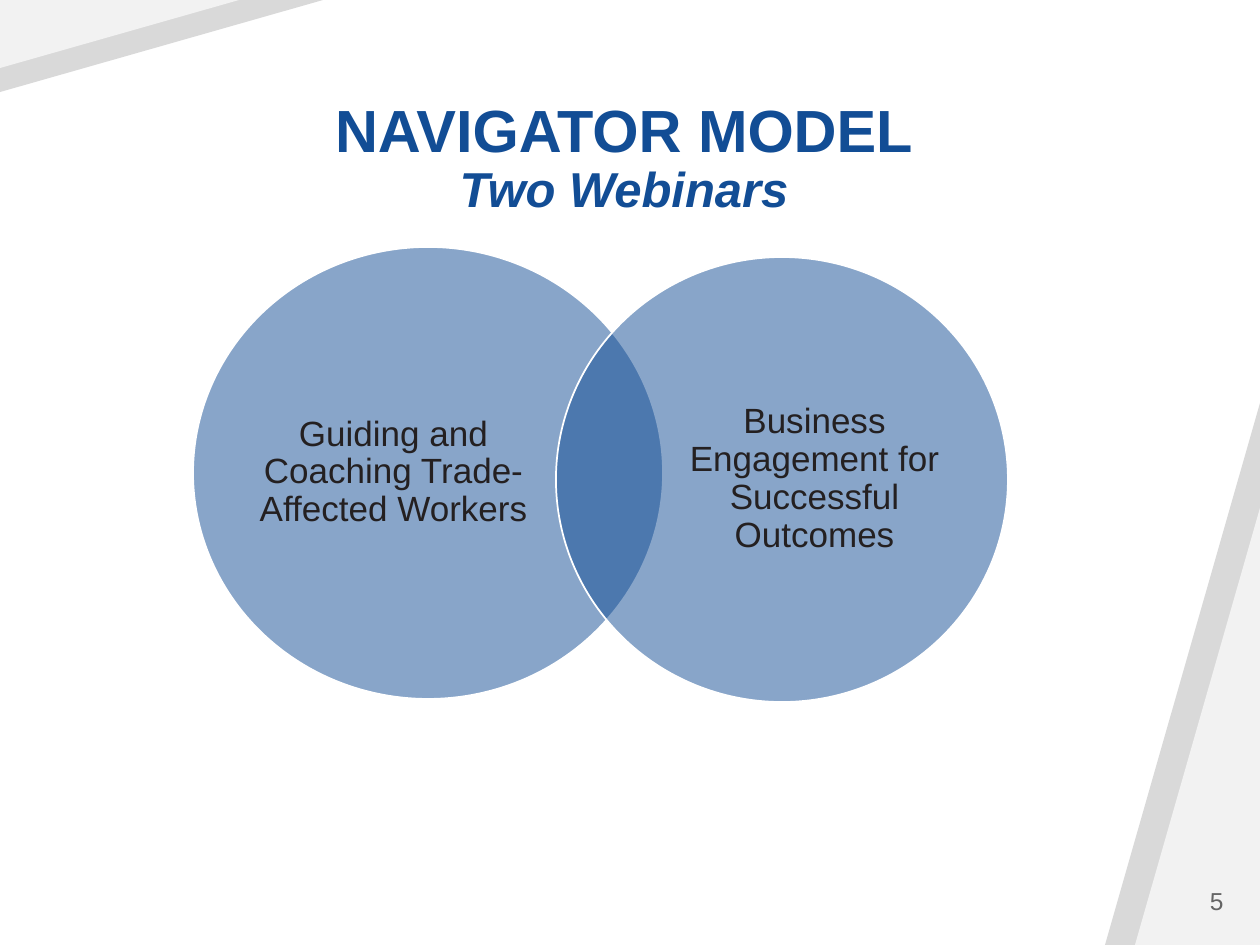
from lxml.etree import SubElement
from pptx import Presentation
from pptx.dml.color import RGBColor
from pptx.enum.shapes import MSO_SHAPE
from pptx.enum.text import MSO_ANCHOR, PP_ALIGN
from pptx.oxml.ns import qn
from pptx.util import Emu, Pt

SLIDE_W, SLIDE_H = 1260, 945
COLORS = {
    "band": "D9D9D9",
    "corner": "F2F2F2",
    "navy": "124D95",
    "outline": "FFFFFF",
    "label": "242021",
    "number": "646464",
}

TITLE_BOX = (169, 95, 910, 169)
TITLE = [("NAVIGATOR MODEL", 34, False), ("Two Webinars", 28, True)]
NUMBER_BOX = (1060, 876, 176, 50)
NUMBER = "5"

WEBINARS = [
    ("Guiding and Coaching Trade-Affected Workers",
     (193, 247, 470, 452), (258, 300, 271, 345)),
    ("Business Engagement for Successful Outcomes",
     (556, 257, 452, 445), (684, 309, 261, 340)),
]

BOTTOM_RIGHT = [("band", 155, 542), ("corner", 125, 437)]
TOP_LEFT = [("band", 323, 92), ("corner", 239, 68)]


def px(length):
    return Emu(round(length * 914400 / 126))


def rgb(name):
    return RGBColor.from_string(COLORS[name])


def add_filled(slide, preset, box, color):
    shape = slide.shapes.add_shape(preset, *map(px, box))
    shape.shadow.inherit = False
    shape.fill.solid()
    shape.fill.fore_color.rgb = rgb(color)
    return shape


def add_triangle(slide, box, color, rotation):
    triangle = add_filled(slide, MSO_SHAPE.ISOSCELES_TRIANGLE, box, color)
    triangle.adjustments[0] = 1
    triangle.rotation = rotation
    triangle.line.fill.background()


def add_circle(slide, box):
    circle = add_filled(slide, MSO_SHAPE.OVAL, box, "navy")
    circle.line.color.rgb = rgb("outline")
    circle.line.width = Pt(1)
    fill_color = circle.fill._xPr.find(qn("a:solidFill"))[0]
    SubElement(fill_color, qn("a:alpha"), val="50000")


def add_text(slide, box, lines, color, align=PP_ALIGN.CENTER, spacing=0.9,
             anchor=MSO_ANCHOR.MIDDLE, bold=False, inset=None):
    frame = slide.shapes.add_textbox(*map(px, box)).text_frame
    frame.word_wrap = True
    frame.vertical_anchor = anchor
    if inset is not None:
        frame.margin_left = frame.margin_right = px(inset)
        frame.margin_top = frame.margin_bottom = px(inset)
    for index, (text, size, italic) in enumerate(lines):
        paragraph = frame.add_paragraph() if index else frame.paragraphs[0]
        paragraph.text = text
        paragraph.alignment = align
        paragraph.line_spacing = spacing
        font = paragraph.font
        font.name = "Arial"
        font.size = Pt(size)
        font.bold = bold
        font.italic = italic
        font.color.rgb = rgb(color)


def main():
    deck = Presentation()
    deck.slide_width, deck.slide_height = px(SLIDE_W), px(SLIDE_H)
    slide = deck.slides.add_slide(deck.slide_layouts[6])

    for color, width, height in BOTTOM_RIGHT:
        box = (SLIDE_W - width, SLIDE_H - height, width, height)
        add_triangle(slide, box, color, 0)
    for color, width, height in TOP_LEFT:
        add_triangle(slide, (0, 0, width, height), color, 180)

    for label, circle_box, label_box in WEBINARS:
        add_circle(slide, circle_box)
        add_text(slide, label_box, [(label, 20, False)], "label", inset=0)

    add_text(slide, NUMBER_BOX, [(NUMBER, 14, False)], "number",
             align=PP_ALIGN.RIGHT, spacing=1.0)
    add_text(slide, TITLE_BOX, TITLE, "navy", anchor=MSO_ANCHOR.TOP, bold=True)
    deck.save("out.pptx")


if __name__ == "__main__":
    main()
